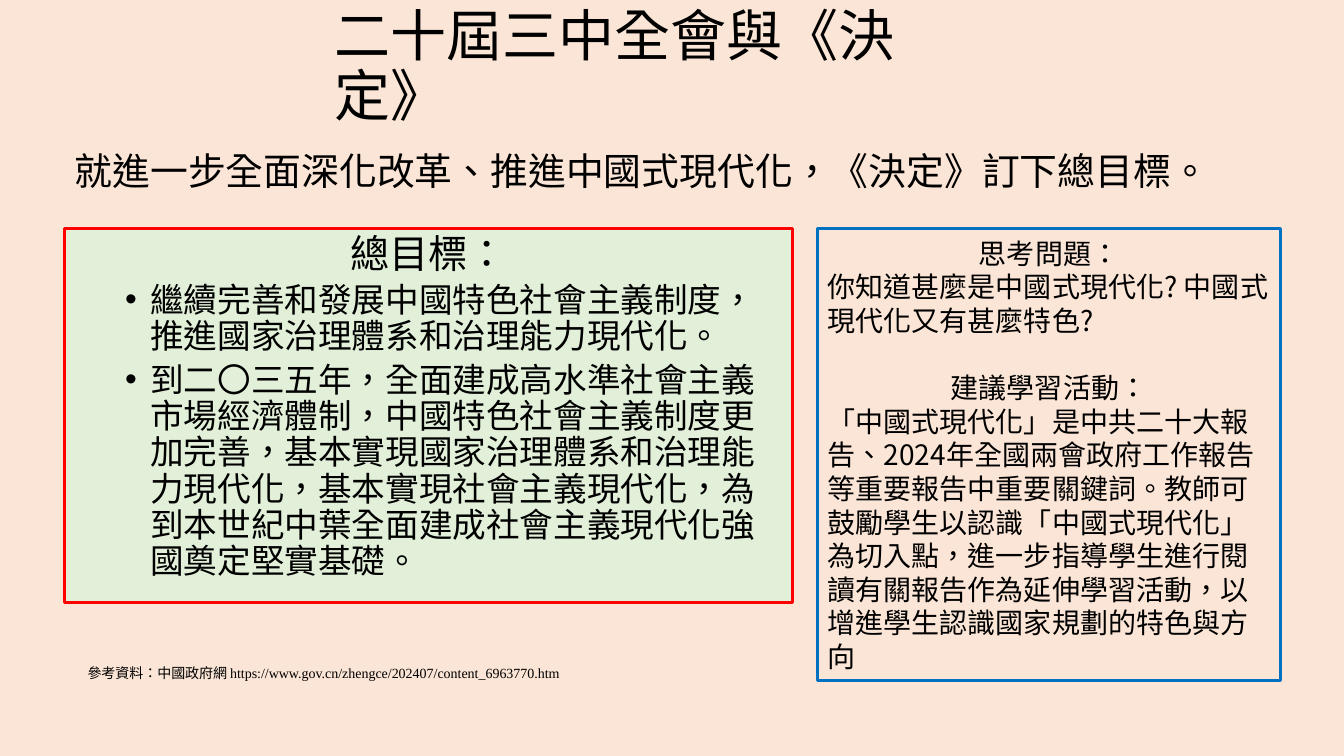
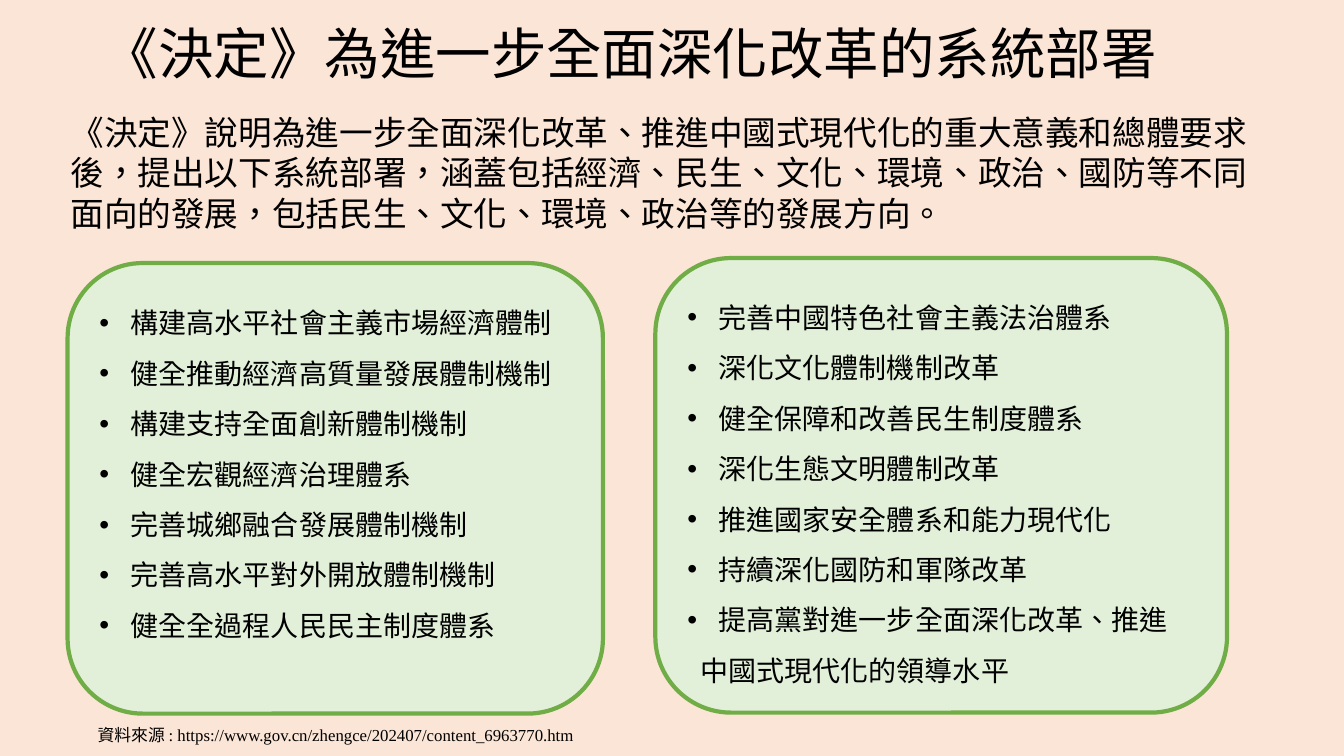
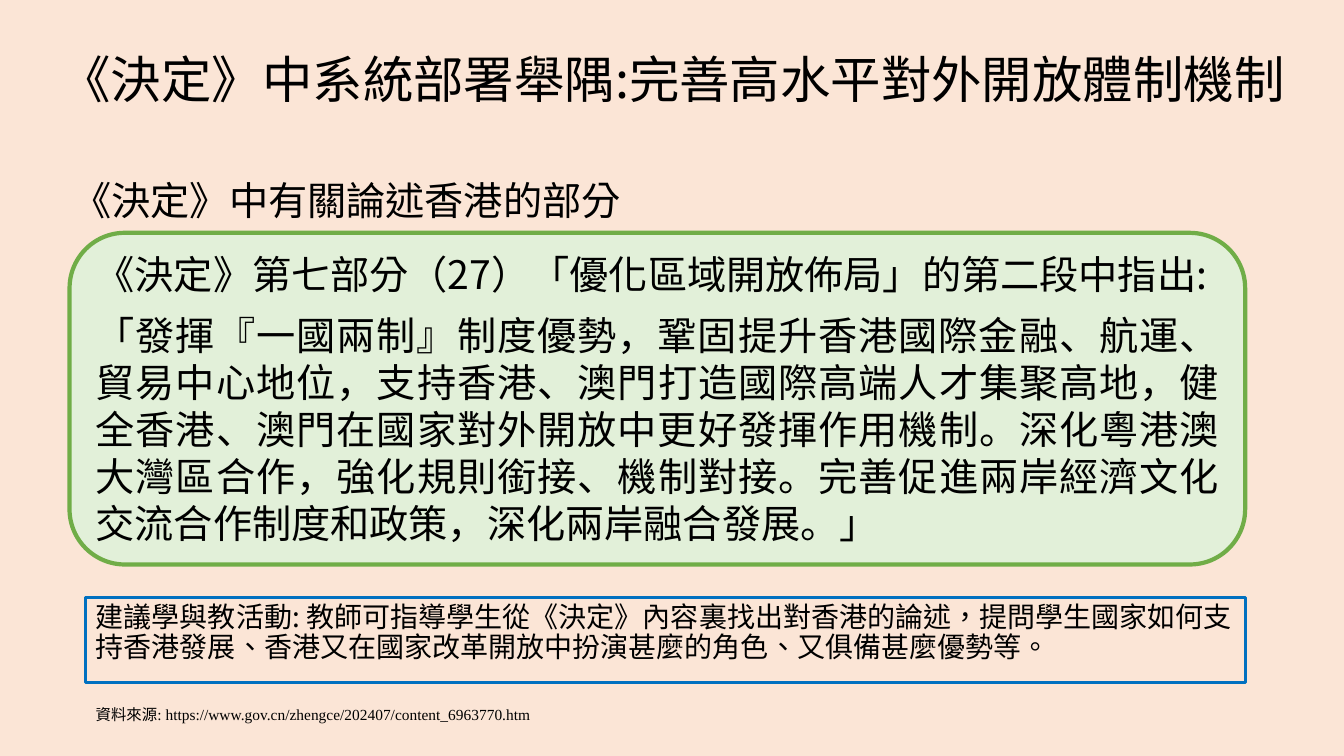
from lxml import etree
from pptx import Presentation
from pptx.dml.color import RGBColor
from pptx.enum import shapes, text
from pptx.oxml.ns import qn
from pptx.util import Inches, Pt

SANS, SERIF = "Noto Sans CJK SC", "Times New Roman"
INK, PEACH, MINT = "000000", "FBE5D6", "E2F0D9"
RED, BLUE, GREEN = "FF0000", "0070C0", "70AD47"
RECT, ROUND = shapes.MSO_SHAPE.RECTANGLE, shapes.MSO_SHAPE.ROUNDED_RECTANGLE
LEFT, MID, JUST = text.PP_ALIGN.LEFT, text.PP_ALIGN.CENTER, text.PP_ALIGN.JUSTIFY
TOP, CENTER, BASE = (text.MSO_ANCHOR.TOP, text.MSO_ANCHOR.MIDDLE,
                     text.MSO_ANCHOR.BOTTOM)
LINK = "https://www.gov.cn/zhengce/202407/content_6963770.htm"


def color(code):
    return RGBColor.from_string(code)


def paint(shape, fill, line, width):
    if fill:
        shape.fill.solid()
        shape.fill.fore_color.rgb = color(fill)
    else:
        shape.fill.background()
    shape.line.color.rgb = color(line)
    shape.line.width = Pt(width)


def place(shape, box):
    shape.left, shape.top, shape.width, shape.height = map(Inches, box)


def setup(frame, anchor=TOP, wrap=True):
    frame.auto_size = text.MSO_AUTO_SIZE.NONE
    frame.word_wrap = wrap
    frame.vertical_anchor = anchor


def para(frame, words, size, lead=1, gap=0, align=LEFT, face=SANS,
         margin=0, hang=0, level=0, lang="zh-TW"):
    item = frame.paragraphs[0]
    if item.text:
        item = frame.add_paragraph()
    item.text = words
    item.level = level
    item.alignment = align
    item.line_spacing = Pt(round(size * 1.2 * lead, 1))
    item.space_before, item.space_after = Pt(gap), Pt(0)
    props = item._p.get_or_add_pPr()
    props.set("marL", str(Inches(margin)))
    props.set("indent", str(-Inches(hang)))
    if hang:
        etree.SubElement(props, qn("a:buFont"), typeface="Arial")
        etree.SubElement(props, qn("a:buChar"), char="•")
    else:
        etree.SubElement(props, qn("a:buNone"))
    font = item.font
    font.size = Pt(size)
    font.color.rgb = color(INK)
    font.name = face
    font._rPr.set("lang", lang)
    etree.SubElement(font._rPr, qn("a:ea"), typeface=SANS)


def title(slide, box, words, size, anchor=CENTER, align=LEFT):
    shape = slide.shapes.title
    place(shape, box)
    setup(shape.text_frame, anchor)
    para(shape.text_frame, words, size, 0.9, align=align)


def body(slide, box):
    shape = slide.placeholders[1]
    place(shape, box)
    setup(shape.text_frame)
    return shape


def label(slide, box, words, size, lead=1, anchor=TOP, wrap=True, face=SANS):
    shape = slide.shapes.add_textbox(*map(Inches, box))
    setup(shape.text_frame, anchor, wrap)
    para(shape.text_frame, words, size, lead, face=face)


def panel(slide, kind, box, fill, line, width, anchor=CENTER):
    shape = slide.shapes.add_shape(kind, *map(Inches, box))
    shape.shadow.inherit = False
    paint(shape, fill, line, width)
    setup(shape.text_frame, anchor)
    return shape.text_frame


def points(frame, items):
    for words in items:
        para(frame, words, 20, 1.5, margin=0.31, hang=0.31)


def goals(slide):
    title(slide, (0.64, 1.39, 11.5, 0.64),
          "就進一步全面深化改革、推進中國式現代化，《決定》訂下總目標。", 27)
    goal = body(slide, (0.64, 2.27, 7.22, 3.71))
    paint(goal, MINT, RED, 2.25)
    frame = goal.text_frame
    para(frame, "總目標：", 28, 0.9, align=MID, face=SERIF)
    for words in (
        "繼續完善和發展中國特色社會主義制度，推進國家治理體系和治理能力現代化。",
        "到二〇三五年，全面建成高水準社會主義市場經濟體制，中國特色社會主義制度"
        "更加完善，基本實現國家治理體系和治理能力現代化，基本實現社會主義現代化，"
        "為到本世紀中葉全面建成社會主義現代化強國奠定堅實基礎。",
    ):
        para(frame, words, 24, 0.9, 5, face=SERIF, margin=0.75, hang=0.25, level=1)
    frame = panel(slide, RECT, (8.11, 2.27, 4.59, 4.48), None, BLUE, 2.25)
    para(frame, "思考問題：", 20, align=MID)
    para(frame, "你知道甚麼是中國式現代化? 中國式現代化又有甚麼特色?", 20)
    para(frame, "建議學習活動：", 20, gap=24, align=MID)
    para(frame, "「中國式現代化」是中共二十大報告、2024年全國兩會政府工作報告等重要"
         "報告中重要關鍵詞。教師可鼓勵學生以認識「中國式現代化」為切入點，進一步指導"
         "學生進行閱讀有關報告作為延伸學習活動，以增進學生認識國家規劃的特色與方向", 20)
    label(slide, (3.22, 0.23, 6.46, 0.88), "二十屆三中全會與《決定》", 40, 0.9, CENTER)
    label(slide, (0.77, 6.54, 5.16, 0.27), "參考資料：中國政府網 " + LINK, 10,
          wrap=False, face=SERIF)


def plans(slide):
    title(slide, (0.92, 0.21, 11.5, 0.68),
          "《決定》為進一步全面深化改革的系統部署", 39.6)
    intro = body(slide, (0.6, 1.06, 12.13, 1.33))
    para(intro.text_frame,
         "《決定》說明為進一步全面深化改革、推進中國式現代化的重大意義和總體要求後，"
         "提出以下系統部署，涵蓋包括經濟、民生、文化、環境、政治、國防等不同面向的發展，"
         "包括民生、文化、環境、政治等的發展方向。", 24)
    frame = panel(slide, ROUND, (0.67, 2.61, 5.31, 4.47), MINT, GREEN, 3)
    frame.margin_bottom = Inches(0.5)
    points(frame, (
        "構建高水平社會主義市場經濟體制",
        "健全推動經濟高質量發展體制機制",
        "構建支持全面創新體制機制",
        "健全宏觀經濟治理體系",
        "完善城鄉融合發展體制機制",
        "完善高水平對外開放體制機制",
        "健全全過程人民民主制度體系",
    ))
    frame = panel(slide, ROUND, (6.5, 2.56, 5.67, 4.51), MINT, GREEN, 3)
    points(frame, (
        "完善中國特色社會主義法治體系",
        "深化文化體制機制改革",
        "健全保障和改善民生制度體系",
        "深化生態文明體制改革",
        "推進國家安全體系和能力現代化",
        "持續深化國防和軍隊改革",
        "提高黨對進一步全面深化改革、推進",
    ))
    para(frame, "中國式現代化的領導水平", 20, 1.5, margin=0.13)
    label(slide, (0.87, 7.14, 5.11, 0.3), "資料來源 : " + LINK, 12,
          wrap=False, face=SERIF)


def sample(slide):
    title(slide, (0.35, 0.37, 12.64, 0.76),
          "《決定》中系統部署舉隅:完善高水平對外開放體制機制", 36, BASE, MID)
    task = body(slide, (0.85, 5.93, 11.5, 0.84))
    paint(task, None, BLUE, 2.25)
    para(task.text_frame,
         "建議學與教活動: 教師可指導學生從《決定》內容裏找出對香港的論述，提問學生國家"
         "如何支持香港發展、香港又在國家改革開放中扮演甚麼的角色、又俱備甚麼優勢等。",
         20, 0.9)
    frame = panel(slide, ROUND, (0.69, 2.31, 11.66, 3.29), MINT, GREEN, 3)
    para(frame, "《決定》第七部分（27）「優化區域開放佈局」的第二段中指出:", 28,
         align=JUST)
    para(frame, "「發揮『一國兩制』制度優勢，鞏固提升香港國際金融、航運、貿易中心地位，"
         "支持香港、澳門打造國際高端人才集聚高地，健全香港、澳門在國家對外開放中更好"
         "發揮作用機制。深化粵港澳大灣區合作，強化規則銜接、機制對接。完善促進兩岸經濟"
         "文化交流合作制度和政策，深化兩岸融合發展。」", 28, gap=10, align=JUST,
         lang="zh-CN")
    label(slide, (0.62, 1.7, 5.7, 0.57), "《決定》中有關論述香港的部分", 28,
          wrap=False, face=SERIF)
    label(slide, (0.85, 6.95, 4.74, 0.29), "資料來源: " + LINK, 11,
          wrap=False, face=SERIF)


def main():
    deck = Presentation()
    deck.slide_width, deck.slide_height = Inches(13.33), Inches(7.5)
    back = deck.slide_master.background.fill
    back.solid()
    back.fore_color.rgb = color(PEACH)
    for build in (goals, plans, sample):
        build(deck.slides.add_slide(deck.slide_layouts[1]))
    deck.save("out.pptx")


if __name__ == "__main__":
    main()
